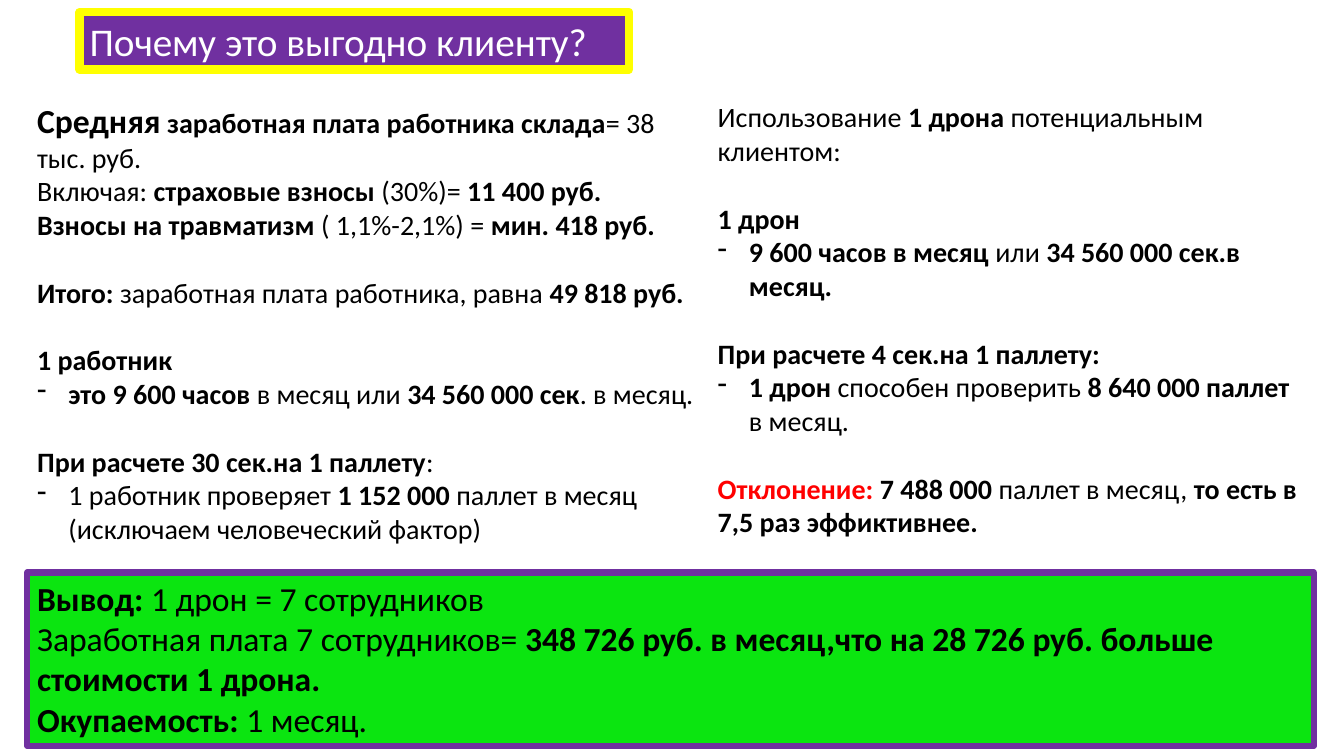
"""Build the slide that compares warehouse worker costs with one drone."""
from lxml import etree
from pptx import Presentation
from pptx.dml.color import RGBColor
from pptx.enum.shapes import MSO_SHAPE
from pptx.enum.text import MSO_ANCHOR, PP_ALIGN
from pptx.oxml.ns import qn
from pptx.util import Inches, Pt

RECTANGLE = MSO_SHAPE.RECTANGLE
TOP = MSO_ANCHOR.TOP
LEFT = PP_ALIGN.LEFT

COLORS = {
    "black": "000000",
    "white": "FFFFFF",
    "red": "FF0000",
    "purple": "7030A0",
    "yellow": "FFFF00",
    "green": "0BE510",
}
BODY_SIZE = 20
LARGE_SIZE = 24
GAP = 24.4
BOLD, PLAIN = True, False


def add_panel(box, fill, outline, width):
    """Add a filled rectangle with a thick outline."""
    panel = slide.shapes.add_shape(RECTANGLE, *[Inches(v) for v in box])
    panel.shadow.inherit = False
    panel.fill.solid()
    panel.fill.fore_color.rgb = RGBColor.from_string(COLORS[fill])
    panel.line.color.rgb = RGBColor.from_string(COLORS[outline])
    panel.line.width = Pt(width)
    return panel


def write(holder, paragraphs, size, color="black"):
    """Write paragraphs given as (kind, runs); kinds: text, gap, dash."""
    frame = holder.text_frame
    frame.word_wrap = True
    frame.vertical_anchor = TOP
    for index, (kind, runs) in enumerate(paragraphs):
        paragraph = frame.add_paragraph() if index else frame.paragraphs[0]
        paragraph.alignment = LEFT
        if kind == "gap":
            paragraph.space_before = Pt(GAP)
        if kind == "dash":
            properties = paragraph._p.get_or_add_pPr()
            properties.set("marL", str(Inches(0.31)))
            properties.set("indent", str(Inches(-0.31)))
            etree.SubElement(properties, qn("a:buFontTx"))
            etree.SubElement(properties, qn("a:buChar")).set("char", "-")
        for text, bold, *special in runs:
            run = paragraph.add_run()
            run.text = text
            run.font.name = "Calibri"
            run.font.bold = bold
            run.font.size = Pt(LARGE_SIZE if "large" in special else size)
            shade = "red" if "red" in special else color
            run.font.color.rgb = RGBColor.from_string(COLORS[shade])


presentation = Presentation()
presentation.slide_width = Inches(13.33)
presentation.slide_height = Inches(7.5)
slide = presentation.slides.add_slide(presentation.slide_layouts[6])

title = add_panel((0.79, 0.12, 5.45, 0.57), "purple", "yellow", 6)
write(title, [("text", [("Почему это выгодно клиенту?", PLAIN)])], 28, "white")

worker_costs = [
    ("text", [("Средняя", BOLD, "large"),
              (" заработная плата работника склада", BOLD),
              ("= 38 тыс. руб.", PLAIN)]),
    ("text", [("Включая: ", PLAIN), ("страховые взносы ", BOLD),
              ("(30%)= ", PLAIN), ("11 400 руб.", BOLD)]),
    ("text", [("Взносы на травматизм ", BOLD), ("( 1,1%-2,1%) = ", PLAIN),
              ("мин. 418 руб.", BOLD)]),
    ("gap", [("Итого: ", BOLD), ("заработная плата работника, равна ", PLAIN),
             ("49 818 руб.", BOLD)]),
    ("gap", [("1 работник", BOLD)]),
    ("dash", [("это 9 600 часов ", BOLD), ("в месяц или ", PLAIN),
              ("34 560 000 сек", BOLD), (". в месяц.", PLAIN)]),
    ("gap", [("При расчете 30 сек.на 1 паллету", BOLD), (":", PLAIN)]),
    ("dash", [("1 работник проверяет ", PLAIN), ("1 152 000 ", BOLD),
              ("паллет в месяц (исключаем человеческий фактор)", PLAIN)]),
]
drone_output = [
    ("text", [("Использование ", PLAIN), ("1 дрона ", BOLD),
              ("потенциальным клиентом:", PLAIN)]),
    ("gap", [("1 дрон", BOLD)]),
    ("dash", [("9 600 часов в месяц ", BOLD), ("или ", PLAIN),
              ("34 560 000 сек.в месяц.", BOLD)]),
    ("gap", [("При расчете 4 сек.на 1 паллету:", BOLD)]),
    ("dash", [("1 дрон ", BOLD), ("способен проверить ", PLAIN),
              ("8 640 000 паллет ", BOLD), ("в месяц.", PLAIN)]),
    ("gap", [("Отклонение: ", BOLD, "red"), ("7 488 000 ", BOLD),
             ("паллет в месяц, ", PLAIN),
             ("то есть в 7,5 раз эффиктивнее.", BOLD)]),
]
columns = [
    ((0.27, 0.94, 6.74, 5.22), worker_costs),
    ((7.02, 0.94, 6.02, 5.99), drone_output),
]
for box, paragraphs in columns:
    column = slide.shapes.add_textbox(*[Inches(v) for v in box])
    write(column, paragraphs, BODY_SIZE)

conclusion = add_panel((0.27, 5.68, 12.76, 1.72), "green", "purple", 4.5)
write(conclusion, [
    ("text", [("Вывод: ", BOLD), ("1 дрон = 7 сотрудников", PLAIN)]),
    ("text", [("Заработная плата 7 сотрудников= ", PLAIN),
              ("348 726 руб. в месяц,что на 28 726 руб. больше "
               "стоимости 1 дрона.", BOLD)]),
    ("text", [("Окупаемость:", BOLD), (" 1 месяц.", PLAIN)]),
], LARGE_SIZE)

presentation.save("out.pptx")
